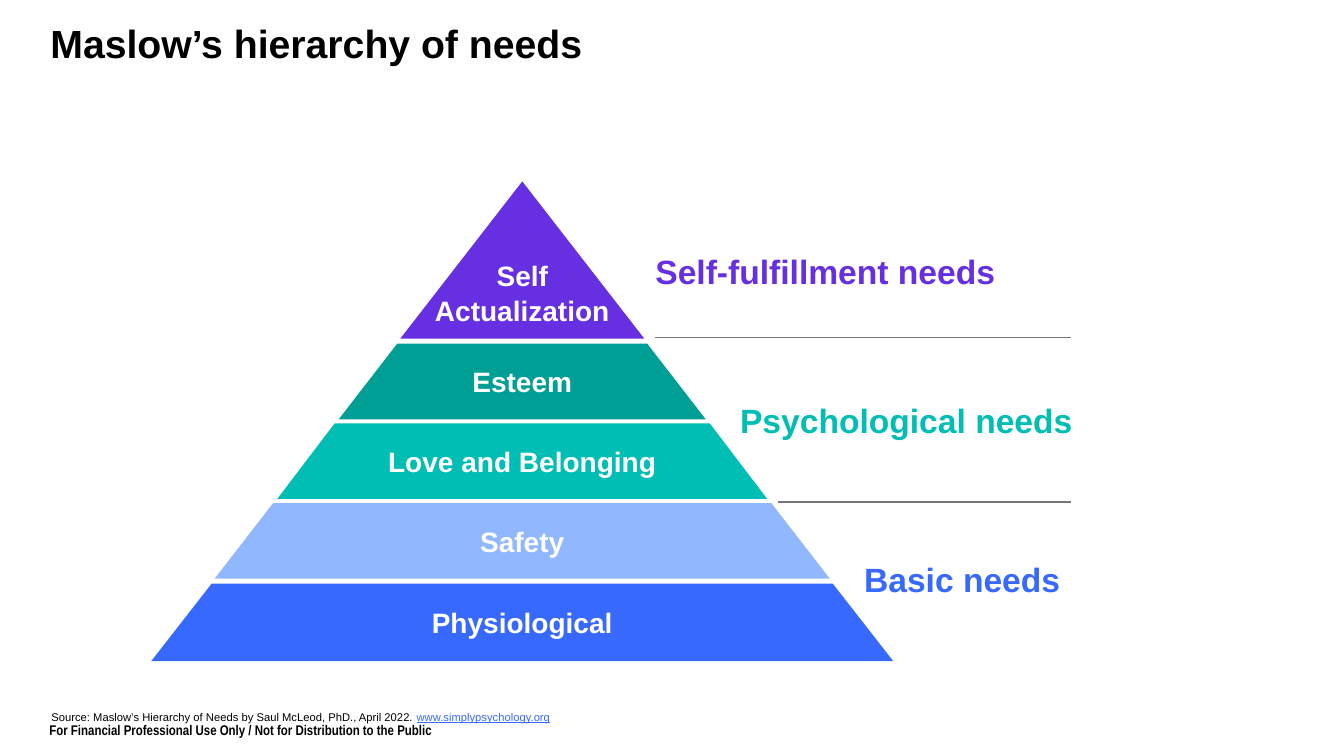
import pptx
import pptx.dml.color
import pptx.enum.shapes
import pptx.enum.text
import pptx.oxml.ns
import pptx.util
from lxml import etree

EMU_PER_PX = 9144
COLORS = {
    "black": "000000",
    "white": "FFFFFF",
    "purple": "672FE2",
    "dark_teal": "009F95",
    "teal": "00BEB3",
    "light_blue": "91B8FF",
    "blue": "3769FF",
    "gray": "767676",
}
APEX_X = 518
APEX_Y = 180
HALF_WIDTH_PER_HEIGHT = 0.773
LEVELS = [
    ("Self Actualization", "purple", 180, 336),
    ("Esteem", "dark_teal", 341, 416),
    ("Love and Belonging", "teal", 420, 495),
    ("Safety", "light_blue", 499, 574),
    ("Physiological", "blue", 579, 656),
]
NEEDS = [
    ("Self-fulfillment needs", "purple", 650, 247, 345),
    ("Psychological needs", "teal", 734, 395, 345),
    ("Basic needs", "blue", 857, 553, 210),
]
DIVIDERS = [(650, 335), (772, 498)]
DIVIDER_RIGHT = 1062


def px(length):
    return pptx.util.Emu(round(length * EMU_PER_PX))


def rgb(name):
    return pptx.dml.color.RGBColor.from_string(COLORS[name])


def add_text(paragraph, text, size=20, color="black", bold=False, underline=None, font="Arial"):
    run = paragraph.add_run()
    run.text = text
    run.font.name = font
    run.font.size = pptx.util.Pt(size)
    run.font.bold = bold
    run.font.underline = underline
    run.font.color.rgb = rgb(color)


class SlideBuilder:
    def __init__(self, presentation):
        self.slide = presentation.slides.add_slide(presentation.slide_layouts[6])
        self.shapes = self.slide.shapes

    def frame(self, shape, anchor, side=0, bottom=0):
        frame = shape.text_frame
        frame.word_wrap = True
        frame.vertical_anchor = anchor
        frame.margin_left = frame.margin_right = px(side)
        frame.margin_top = 0
        frame.margin_bottom = px(bottom)
        return frame.paragraphs[0]

    def label(self, left, top, width, height, text, **style):
        box = self.shapes.add_textbox(px(left), px(top), px(width), px(height))
        paragraph = self.frame(box, pptx.enum.text.MSO_ANCHOR.MIDDLE)
        add_text(paragraph, text, **style)
        return paragraph

    def level(self, text, color, top, bottom):
        upper = round((top - APEX_Y) * HALF_WIDTH_PER_HEIGHT)
        lower = round((bottom - APEX_Y) * HALF_WIDTH_PER_HEIGHT)
        is_peak = upper == 0
        corners = [(APEX_X + lower, bottom), (APEX_X - lower, bottom)]
        if not is_peak:
            corners.append((APEX_X - upper, top))
        builder = self.shapes.build_freeform(APEX_X + upper, top, scale=EMU_PER_PX)
        builder.add_line_segments(corners, close=True)
        shape = builder.convert_to_shape()
        shape.shadow.inherit = False
        shape.fill.solid()
        shape.fill.fore_color.rgb = rgb(color)
        shape.line.fill.background()
        if is_peak:
            paragraph = self.frame(shape, pptx.enum.text.MSO_ANCHOR.BOTTOM, side=30, bottom=11)
            paragraph.line_spacing = 1.05
        else:
            paragraph = self.frame(shape, pptx.enum.text.MSO_ANCHOR.MIDDLE)
        paragraph.alignment = pptx.enum.text.PP_ALIGN.CENTER
        add_text(paragraph, text, color="white", bold=True)

    def divider(self, left, y, right):
        connector = self.shapes.add_connector(
            pptx.enum.shapes.MSO_CONNECTOR.STRAIGHT, px(left), px(y), px(right), px(y)
        )
        connector.line.color.rgb = rgb("gray")
        connector.line.width = pptx.util.Pt(1)
        properties = connector.element.find(pptx.oxml.ns.qn("p:spPr"))
        etree.SubElement(properties, pptx.oxml.ns.qn("a:effectLst"))


def main():
    presentation = pptx.Presentation()
    presentation.slide_width = pptx.util.Inches(13.33)
    presentation.slide_height = pptx.util.Inches(7.5)
    builder = SlideBuilder(presentation)

    builder.label(50, 20, 892, 46, "Maslow’s hierarchy of needs", size=28, bold=True)
    for text, color, top, bottom in LEVELS:
        builder.level(text, color, top, bottom)
    for text, color, left, top, width in NEEDS:
        builder.label(left, top, width, 43, text, size=24, color=color, bold=True)
    for left, y in DIVIDERS:
        builder.divider(left, y, DIVIDER_RIGHT)

    source = builder.label(
        51, 703, 510, 16,
        "Source: Maslow’s Hierarchy of Needs by Saul McLeod, PhD., April 2022. ",
        size=8,
    )
    add_text(source, "www.simplypsychology.org", size=8, color="blue", underline=True)
    builder.label(
        49, 714, 400, 20,
        "For Financial Professional Use Only / Not for Distribution to the Public",
        size=10, bold=True, font="Arial Narrow",
    )
    presentation.save("out.pptx")


if __name__ == "__main__":
    main()
